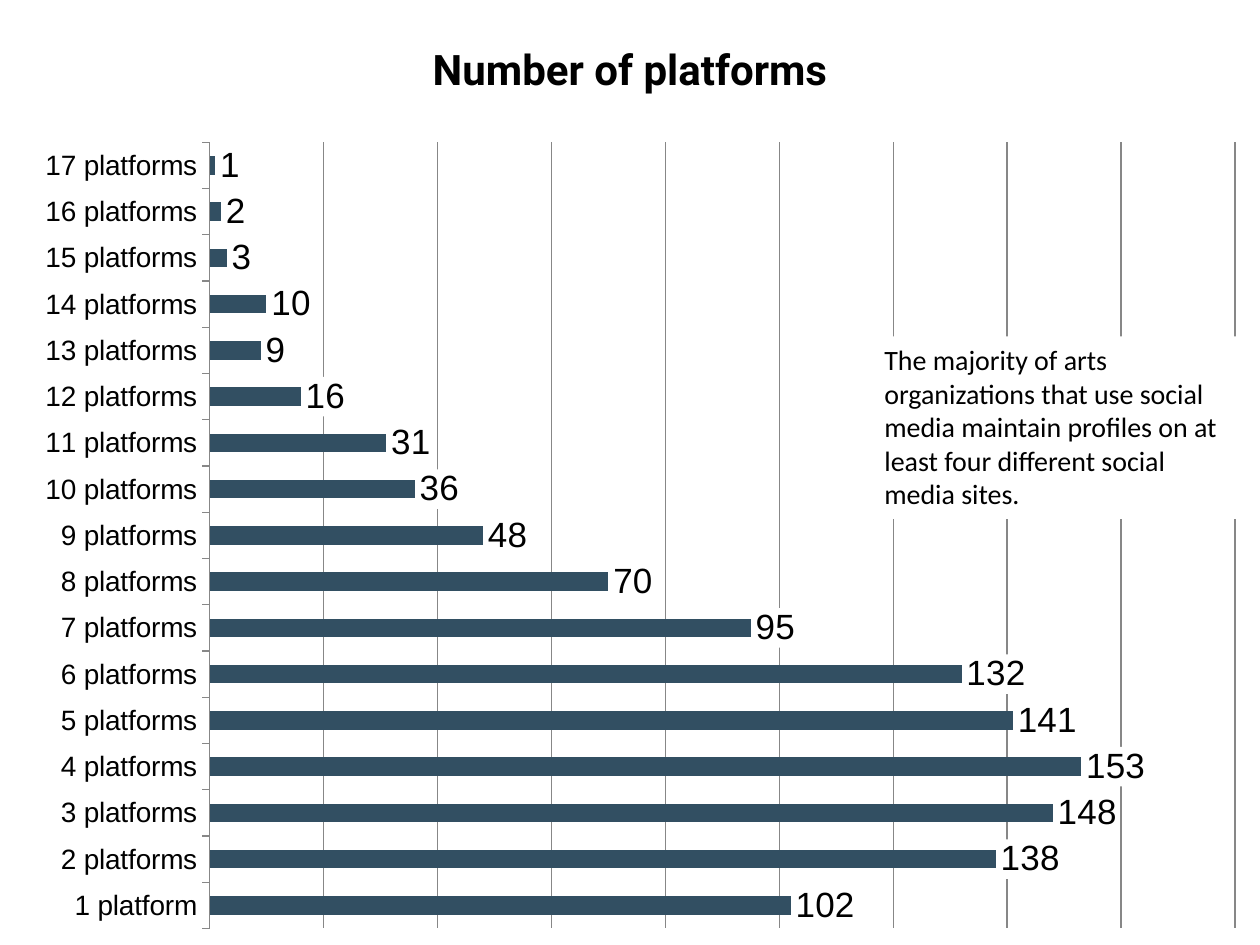
from pptx import Presentation
from pptx.chart.data import CategoryChartData
from pptx.dml.color import RGBColor
from pptx.enum import chart as ch, text
from pptx.oxml import parse_xml
from pptx.oxml.ns import nsdecls, qn
from pptx.util import Cm, Pt

BLACK = RGBColor(0, 0, 0)
WHITE = RGBColor(255, 255, 255)
SLATE = RGBColor(0x32, 0x4F, 0x62)
GREY = RGBColor(0x87, 0x87, 0x87)


def format_font(font, **values):
    font.color.rgb = BLACK
    for attribute, value in values.items():
        setattr(font, attribute, value)


def white_fill():
    return parse_xml(
        f'<c:spPr {nsdecls("c", "a")}><a:solidFill><a:srgbClr val="{WHITE}"/></a:solidFill>'
        '<a:ln><a:noFill/></a:ln></c:spPr>')


prs = Presentation()
prs.slide_width, prs.slide_height = Cm(25.4), Cm(19.05)
slide = prs.slides.add_slide(prs.slide_layouts[5])

heading = slide.shapes.title
for attribute, value in dict(left=-0.2 + 1.47, top=-0.2, width=22.86, height=3.18).items():
    setattr(heading, attribute, Cm(value))
heading.text_frame.text = "Number of platforms"
heading.text_frame.vertical_anchor = text.MSO_ANCHOR.MIDDLE
heading_line = heading.text_frame.paragraphs[0]
heading_line.alignment = text.PP_ALIGN.CENTER
format_font(heading_line.runs[0].font, name="Roboto", size=Pt(24), bold=True)

organizations = [102, 138, 148, 153, 141, 132, 95, 70, 48, 36, 31, 16, 9, 10, 3, 2, 1]
counts = CategoryChartData()
counts.categories = [f"{n} platform{'s' if n > 1 else ''}"
                     for n in range(1, len(organizations) + 1)]
counts.add_series("Series 1", organizations)
chart = slide.shapes.add_chart(ch.XL_CHART_TYPE.BAR_CLUSTERED, Cm(0.43), Cm(2.54),
                               Cm(24.97), Cm(16.51), counts).chart
chart.has_legend = False
chart.has_title = False
format_font(chart.font, name="Arial", size=Pt(10))

platforms_axis = chart.category_axis
platforms_axis.major_tick_mark = ch.XL_TICK_MARK.OUTSIDE
format_font(platforms_axis.tick_labels.font, name="Arial", size=Pt(16))

count_axis = chart.value_axis
for attribute, value in dict(visible=False, has_major_gridlines=True, minimum_scale=0,
                             maximum_scale=180, major_unit=20).items():
    setattr(count_axis, attribute, value)
for line in (platforms_axis.format.line, count_axis.major_gridlines.format.line):
    line.color.rgb = GREY
    line.width = Pt(0.75)

plot = chart.plots[0]
plot.gap_width = 150
plot.vary_by_categories = False
bars = plot.series[0]
bars.format.fill.solid()
bars.format.fill.fore_color.rgb = SLATE

labels = bars.data_labels
labels.show_value = True
labels.position = ch.XL_LABEL_POSITION.OUTSIDE_END
format_font(labels.font, name="Arial", size=Pt(20))
bars._element.find(qn("c:dLbls")).find(qn("c:txPr")).addprevious(white_fill())

plot_area = chart._chartSpace.chart.plotArea
for automatic in plot_area.findall(qn("c:layout")):
    plot_area.remove(automatic)
edges = "".join(f'<c:{tag} val="{value}"/>' for tag, value in [
    ("layoutTarget", "inner"), ("xMode", "edge"), ("yMode", "edge"),
    ("x", 0.152), ("y", 0.02), ("w", 0.828), ("h", 0.96)])
plot_area.insert(0, parse_xml(
    f'<c:layout {nsdecls("c")}><c:manualLayout>{edges}</c:manualLayout></c:layout>'))
plot_area.append(white_fill())

finding = slide.shapes.add_textbox(Cm(17.58), Cm(6.78), Cm(7.42), Cm(3.68))
finding.fill.solid()
finding.fill.fore_color.rgb = WHITE
finding.text_frame.text = ("The majority of arts organizations that use social media maintain "
                           "profiles on at least four different social media sites.")
finding.text_frame.word_wrap = True
finding.text_frame.auto_size = text.MSO_AUTO_SIZE.SHAPE_TO_FIT_TEXT
format_font(finding.text_frame.paragraphs[0].runs[0].font, name="Calibri", size=Pt(16))

prs.save("out.pptx")
